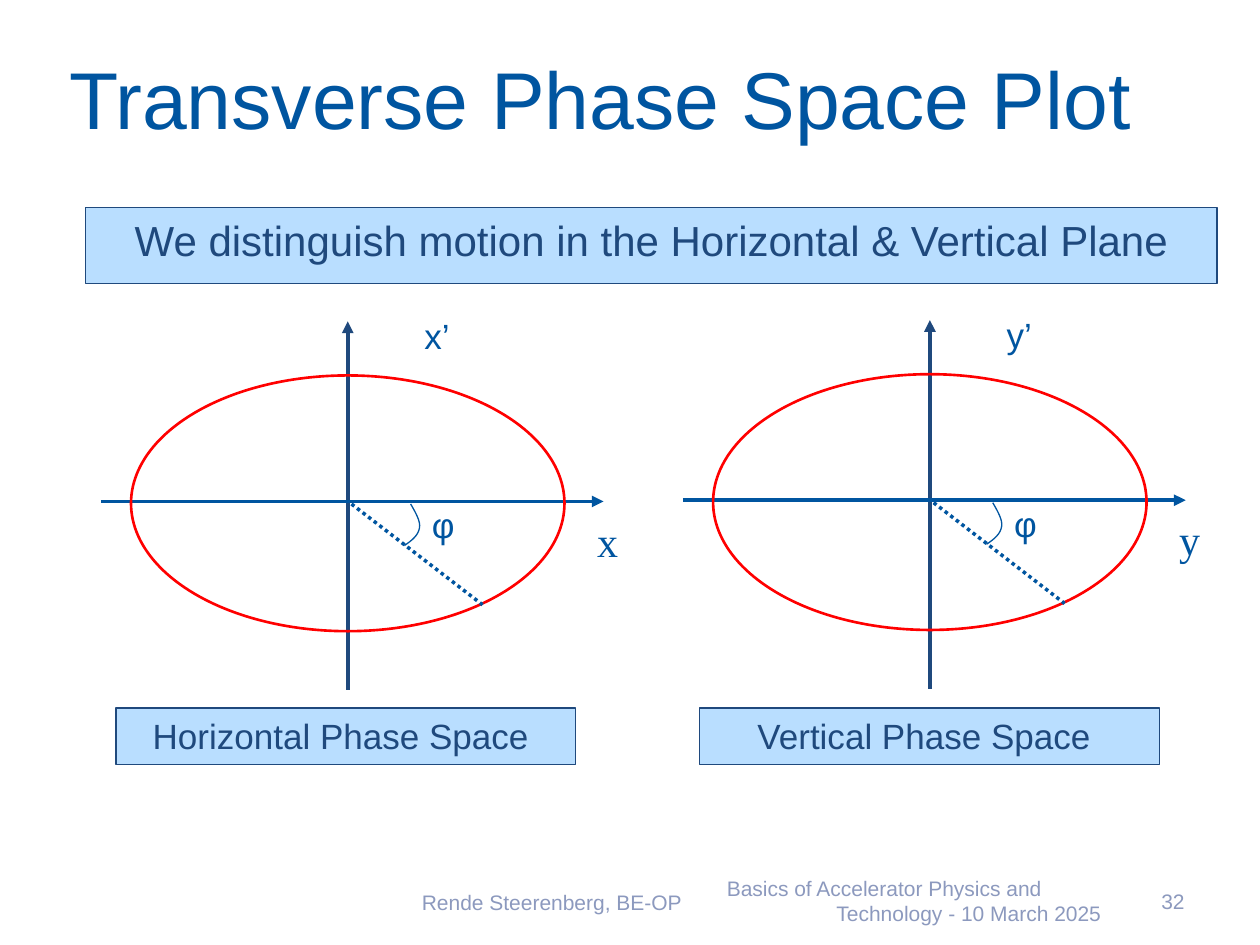
from dataclasses import dataclass

import pptx
import pptx.dml.color
import pptx.enum.dml
import pptx.enum.shapes
import pptx.enum.text
import pptx.oxml
import pptx.oxml.ns
import pptx.util

Inches = pptx.util.Inches
Pt = pptx.util.Pt
ALIGN = pptx.enum.text.PP_ALIGN
ANCHOR = pptx.enum.text.MSO_ANCHOR
SHAPE = pptx.enum.shapes.MSO_SHAPE
qn = pptx.oxml.ns.qn


@dataclass(frozen=True)
class Theme:
    blue: str = "0055A0"
    navy: str = "1F497D"
    pale: str = "B9DEFF"
    red: str = "FF0000"
    muted: str = "8C99BE"
    sans: str = "Arial"
    serif: str = "Times New Roman"
    title: float = 46
    banner: float = 24
    label: float = 20
    footer: float = 12


THEME = Theme()


def rgb(color):
    return pptx.dml.color.RGBColor.from_string(color)


def write(frame, text, *, size, color=THEME.blue, font=THEME.sans,
          aligns=(ALIGN.LEFT,), anchor=ANCHOR.TOP, wrap=True):
    """Fill the frame with one paragraph per line, each with its own alignment."""
    frame.text = text
    frame.word_wrap = wrap
    frame.vertical_anchor = anchor
    for paragraph, align in zip(frame.paragraphs, aligns):
        paragraph.alignment = align
        paragraph.font.size = Pt(size)
        paragraph.font.name = font
        paragraph.font.color.rgb = rgb(color)


class SlideBuilder:
    def __init__(self, slide, theme):
        self.slide = slide
        self.theme = theme
        self.canvas = slide.shapes

    def title(self, text, box):
        holder = self.slide.shapes.title
        holder.left, holder.top, holder.width, holder.height = map(Inches, box)
        frame = holder.text_frame
        frame.margin_left = frame.margin_right = Inches(0.05)
        frame.auto_size = pptx.enum.text.MSO_AUTO_SIZE.NONE
        write(frame, text, size=self.theme.title, anchor=ANCHOR.MIDDLE)

    def text(self, text, box, grow=False, **style):
        frame = self.canvas.add_textbox(*map(Inches, box)).text_frame
        write(frame, text, **style)
        if grow:
            frame.auto_size = pptx.enum.text.MSO_AUTO_SIZE.SHAPE_TO_FIT_TEXT

    def outline(self, shape, color, width):
        shape.shadow.inherit = False
        shape.line.color.rgb = rgb(color)
        shape.line.width = Pt(width)

    def panel(self, text, box, size, right_inset=0.1):
        panel = self.canvas.add_shape(SHAPE.RECTANGLE, *map(Inches, box))
        panel.fill.solid()
        panel.fill.fore_color.rgb = rgb(self.theme.pale)
        self.outline(panel, self.theme.navy, 0.75)
        panel.text_frame.margin_right = Inches(right_inset)
        write(panel.text_frame, text, size=size, color=self.theme.navy,
              aligns=(ALIGN.CENTER,))

    def ellipse(self, box, color, width):
        ellipse = self.canvas.add_shape(SHAPE.OVAL, *map(Inches, box))
        ellipse.fill.background()
        self.outline(ellipse, color, width)

    def line(self, start, end, color, width, arrow_at=None, dash=None):
        """Draw a line; arrow_at is "headEnd" (start) or "tailEnd" (end)."""
        line = self.canvas.add_connector(
            pptx.enum.shapes.MSO_CONNECTOR.STRAIGHT, *map(Inches, start + end))
        line.line.color.rgb = rgb(color)
        line.line.width = Pt(width)
        if dash:
            line.line.dash_style = dash
        if arrow_at:
            arrow = pptx.oxml.parse_xml(
                f'<a:{arrow_at} {pptx.oxml.ns.nsdecls("a")} type="triangle"/>')
            line.line._get_or_add_ln().append(arrow)
        line._element.spPr.append(
            pptx.oxml.parse_xml(f'<a:effectLst {pptx.oxml.ns.nsdecls("a")}/>'))

    def curve(self, points, color, width):
        """Draw Bezier segments: a start point, then three points per segment."""
        start, *controls = [tuple(map(Inches, point)) for point in points]
        builder = self.canvas.build_freeform(*start)
        builder.add_line_segments(controls, close=False)
        curve = builder.convert_to_shape()
        curve.fill.background()
        self.outline(curve, color, width)
        segments = list(curve._element.iter(qn("a:lnTo")))
        for first in range(0, len(segments), 3):
            bezier = pptx.oxml.parse_xml(
                f'<a:cubicBezTo {pptx.oxml.ns.nsdecls("a")}/>')
            segments[first].addprevious(bezier)
            for segment in segments[first:first + 3]:
                bezier.append(segment[0])
                segment.getparent().remove(segment)

    def phase_plot(self, axis, caption, caption_left, dx, dy):
        """Draw one phase space ellipse, shifted by dx and dy from the left one."""
        theme = self.theme

        def at(x, y, *size):
            return (x + dx, y + dy, *size)

        self.canvas = self.slide.shapes.add_group_shape().shapes
        self.line(at(2.76, 2.55), at(2.76, 5.48), theme.navy, 2.25, "headEnd")
        self.line(at(0.8, 3.98), at(4.79, 3.98), theme.blue, 2.25, "tailEnd")
        self.ellipse(at(1.04, 2.98, 3.44, 2.03), theme.red, 1.5)
        self.text(axis, at(4.64, 4.04, 0.37, 0.5), grow=True, wrap=False,
                  size=theme.banner, font=theme.serif)
        self.line(at(2.79, 4), at(3.83, 4.8), theme.blue, 2,
                  dash=pptx.enum.dml.MSO_LINE.ROUND_DOT)
        angle_arc = [(3.26, 4), (3.3, 4.07), (3.34, 4.14), (3.33, 4.19),
                     (3.32, 4.25), (3.27, 4.29), (3.21, 4.33)]
        self.curve([at(*point) for point in angle_arc], theme.blue, 0.75)
        self.text("φ", at(3.33, 3.95, 0.34, 0.48), grow=True, wrap=False,
                  size=theme.label, aligns=(ALIGN.CENTER,))
        self.canvas = self.slide.shapes
        self.text(axis + "’", at(3.27, 2.45, 0.48, 0.44), grow=True,
                  size=theme.label)
        self.panel(caption, (caption_left, 5.62, 3.65, 0.45), theme.label,
                   right_inset=0.18)

    def footer(self, text, box, *aligns):
        self.text(text, box, size=self.theme.footer, color=self.theme.muted,
                  aligns=aligns, anchor=ANCHOR.MIDDLE)


def main():
    deck = pptx.Presentation()
    deck.slide_width, deck.slide_height = Inches(10), Inches(7.5)
    title_only = deck.slide_layouts[5]
    page = SlideBuilder(deck.slides.add_slide(title_only), THEME)

    page.title("Transverse Phase Space Plot", (0.5, 0.26, 9, 1.03))
    page.footer("Rende Steerenberg, BE-OP", (3.25, 6.96, 2.33, 0.4), ALIGN.LEFT)
    page.footer("Basics of Accelerator Physics and\nTechnology - 10 March 2025",
                (5.67, 6.95, 3.17, 0.4), ALIGN.LEFT, ALIGN.RIGHT)
    page.footer("32", (8.95, 6.95, 0.55, 0.4), ALIGN.RIGHT)
    page.panel("We distinguish motion in the Horizontal & Vertical Plane",
               (0.68, 1.65, 8.98, 0.6), THEME.banner)
    page.phase_plot("x", "Horizontal Phase Space", 0.92, dx=0, dy=0)
    page.phase_plot("y", "Vertical Phase Space", 5.55, dx=4.62, dy=-0.01)

    deck.save("out.pptx")


if __name__ == "__main__":
    main()
